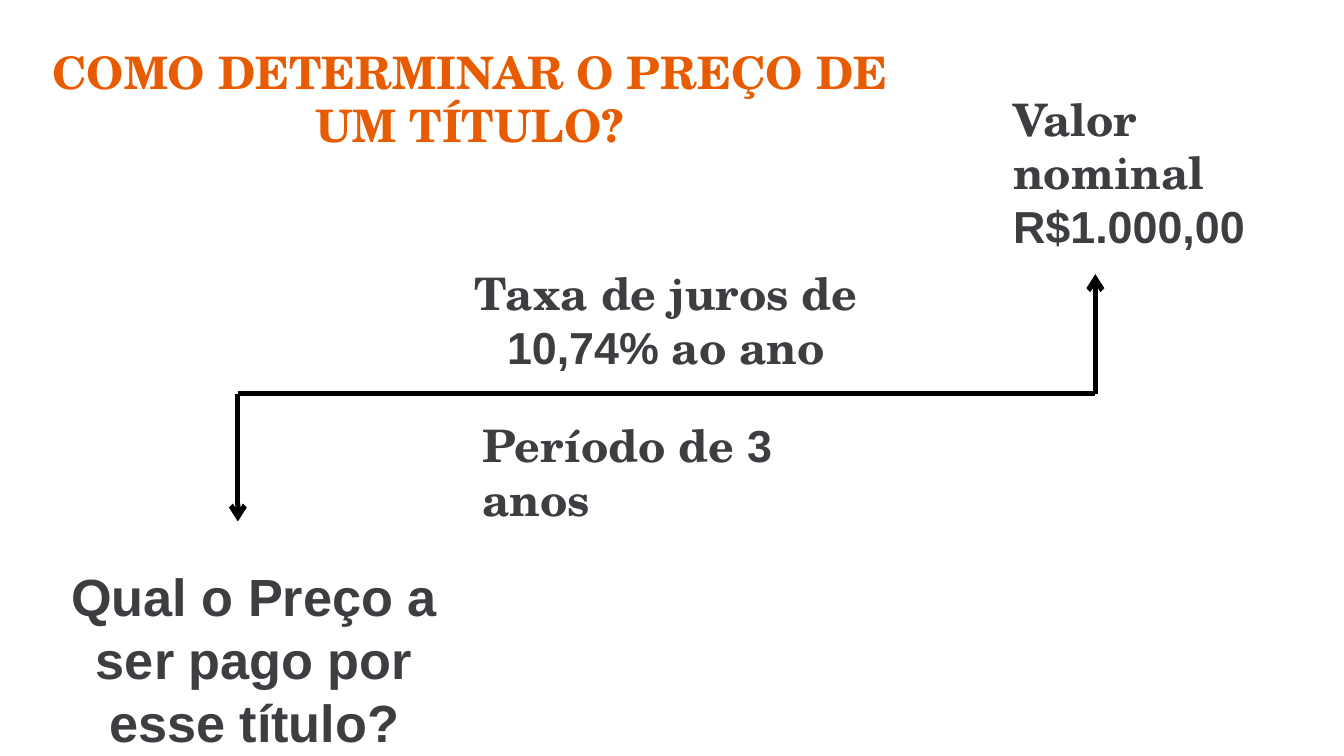
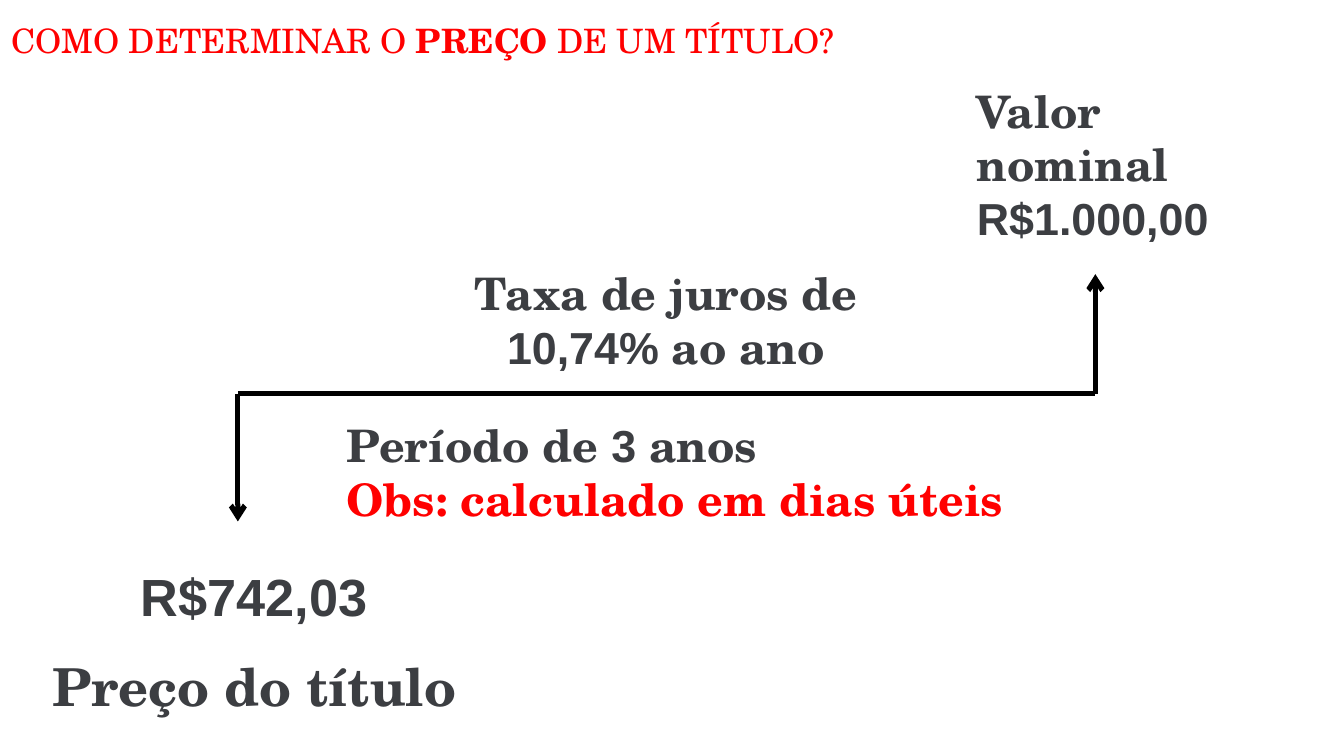
from lxml.etree import SubElement as Sub
from pptx import Presentation
from pptx.dml.color import RGBColor as Rgb
from pptx.enum.shapes import MSO_CONNECTOR as Conn, MSO_SHAPE as Kind
from pptx.enum.text import MSO_ANCHOR as Anchor, MSO_AUTO_SIZE as Fit, PP_ALIGN as Align
from pptx.oxml.ns import qn
from pptx.util import Pt

PX = 9144
WIDE = 1000 * PX
HUES = {"ink": "3C3E42", "title": "E75C01", "red": "FF0000", "line": "000000", "back": "FFFFFF"}
SERIF, SANS = "TeX Gyre Schola", "Arial"
RATE = [[("Taxa de juros de", SERIF)], [("10,74%", SANS), (" ao ano", SERIF)]]
TERM = [("Período de ", SERIF), ("3", SANS), (" anos", SERIF)]
FACE = [[("Valor nominal", SERIF)], [("R$1.000,00", SANS)]]


def hue(name):
    """Return the named colour."""
    return Rgb.from_string(HUES[name])


def write(shape, lines, size, align, tint="ink"):
    """Fill a shape with lines of (text, font, colour, bold) runs."""
    frame = shape.text_frame
    frame.word_wrap = True
    frame.auto_size = Fit.SHAPE_TO_FIT_TEXT
    frame.vertical_anchor = Anchor.TOP
    for i, line in enumerate(lines):
        para = frame.add_paragraph() if i else frame.paragraphs[0]
        para.alignment = align
        for text, face, *style in line:
            color, bold = style or (tint, True)
            run = para.add_run()
            run.text = text
            font = run.font
            font.name, font.size, font.bold = face, Pt(size), bold
            font.color.rgb = hue(color)


def label(slide, box, lines, size=24, align=Align.LEFT, tint="ink"):
    """Add a plain text box."""
    shape = slide.shapes.add_textbox(*(n * PX for n in box))
    write(shape, lines, size, align, tint)


def panel(slide, box, text, face):
    """Add a white rectangle with large centred text."""
    shape = slide.shapes.add_shape(Kind.RECTANGLE, *(n * PX for n in box))
    shape.shadow.inherit = False
    shape.fill.solid()
    shape.fill.fore_color.rgb = hue("back")
    shape.line.fill.background()
    write(shape, [[(text, face)]], 28, Align.CENTER)


def stroke(group, start, end, arrow=False):
    """Draw a black line, with an arrowhead at its end if asked."""
    line = group.shapes.add_connector(Conn.STRAIGHT, *(n * PX for n in start + end))
    line.line.width = Pt(2.75)
    line.line.color.rgb = hue("line")
    props = line.element.spPr
    if arrow:
        Sub(props.find(qn("a:ln")), qn("a:tailEnd"), type="arrow")
    Sub(props, qn("a:effectLst"))


def flow(slide, box, rise):
    """Draw the cash flow axis, paying down at left and receiving up at right."""
    left, top, width, height = box
    right, axis = left + width, top + rise
    group = slide.shapes.add_group_shape()
    stroke(group, (left, axis), (right, axis))
    stroke(group, (left, axis), (left, top + height), True)
    stroke(group, (right, axis), (right, top), True)


def chart(slide, face, term, lines):
    """Place the cash flow and its labels."""
    flow(slide, (177, 204, 638, 184), 89)
    label(slide, face, FACE)
    label(slide, (277, 193, 437, 91), RATE, align=Align.CENTER)
    label(slide, term, lines)


def ask(deck):
    """Build the slide that asks for the price."""
    slide = deck.slides.add_slide(deck.slide_layouts[6])
    chart(slide, (744, 63, 260, 91), (349, 306, 324, 50), [TERM])
    panel(slide, (24, 415, 330, 151), "Qual o Preço a ser pago por esse título?", SANS)
    title = [[("COMO DETERMINAR O PREÇO DE UM TÍTULO?", SERIF)]]
    label(slide, (-1, 28, 701, 91), title, align=Align.CENTER, tint="title")


def answer(deck):
    """Build the slide that gives the price."""
    slide = deck.slides.add_slide(deck.slide_layouts[6])
    note = [("Obs: calculado em dias úteis", SERIF, "red", True)]
    chart(slide, (717, 57, 260, 91), (248, 306, 567, 91), [TERM, note])
    for i, (text, face) in enumerate([("R$742,03", SANS), ("Preço do título", SERIF)]):
        panel(slide, (24, 415 + 67 * i, 330, 57), text, face)
    title = [[("COMO DETERMINAR O ", SERIF, "red", False), ("PREÇO", SERIF, "red", True),
              (" DE UM TÍTULO?", SERIF, "red", False)]]
    label(slide, (-12, 10, 654, 40), title, 18, Align.CENTER)


def main():
    """Build and save the deck."""
    deck = Presentation()
    deck.slide_width, deck.slide_height = WIDE, WIDE * 9 // 16
    ask(deck)
    answer(deck)
    deck.save("out.pptx")


if __name__ == "__main__":
    main()
